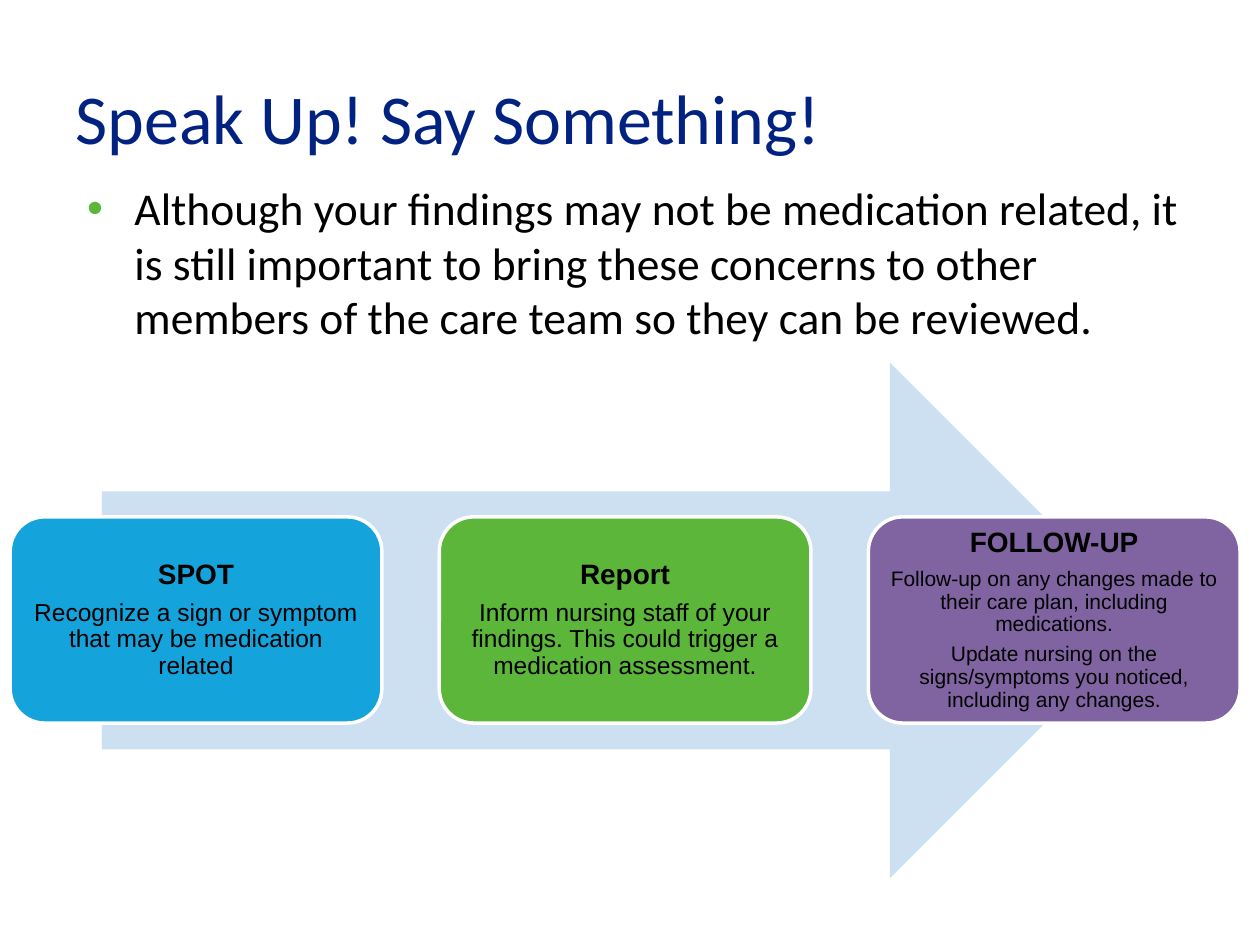
"""Build the "Speak Up! Say Something!" slide with its three-step arrow."""
from lxml import etree
from pptx import Presentation
from pptx.dml.color import RGBColor as RGB
from pptx.enum.shapes import MSO_SHAPE as SHAPE
from pptx.enum.text import MSO_ANCHOR as ANCHOR, PP_ALIGN as ALIGN
from pptx.oxml.ns import qn
from pptx.util import Pt

COLORS = {
    "title": "012281", "text": "000000", "arrow": "CCE0F2", "outline": "FFFFFF",
    "blue": "15A3DC", "green": "5BB63A", "purple": "8064A2",
}
STEPS = [
    ("blue", 14, ["SPOT", "Recognize a sign or symptom that may be medication related"]),
    ("green", 14, ["Report", "Inform nursing staff of your findings. "
                   "This could trigger a medication assessment."]),
    ("purple", 12, ["FOLLOW-UP",
                    "Follow-up on any changes made to their care plan, including medications.",
                    "Update nursing on the signs/symptoms you noticed, including any changes."]),
]
STEP_LEFT, STEP_PITCH = 5.8, 245.2


def set_font(para, name, size, color, bold=False):
    font = para.font
    font.name, font.size, font.bold = name, Pt(size), bold
    font.color.rgb = RGB.from_string(COLORS[color])


def add_filled(page, kind, left, top, width, height, color):
    shape = page.shapes.add_shape(kind, Pt(left), Pt(top), Pt(width), Pt(height))
    shape.shadow.inherit = False
    shape.fill.solid()
    shape.fill.fore_color.rgb = RGB.from_string(COLORS[color])
    return shape


deck = Presentation()
deck.slide_width, deck.slide_height = Pt(720), Pt(540)
page = deck.slides.add_slide(deck.slide_layouts[5])

title = page.shapes.title
title.left, title.top, title.width, title.height = Pt(36), Pt(21.6), Pt(648), Pt(90)
title.text_frame.text = "Speak Up! Say Something!"
title.text_frame.vertical_anchor = ANCHOR.MIDDLE
para = title.text_frame.paragraphs[0]
para.alignment = ALIGN.LEFT
set_font(para, "Calibri", 40, "title")

body = page.shapes.add_textbox(Pt(33.8), Pt(99.4), Pt(648), Pt(356.4))
body.text_frame.word_wrap = True
para = body.text_frame.paragraphs[0]
para.text = ("Although your findings may not be medication related, it is still important "
             "to bring these concerns to other members of the care team so they can be reviewed.")
properties = para._p.get_or_add_pPr()
properties.set("marL", str(Pt(36)))
properties.set("indent", str(Pt(-27)))
bullet_color = etree.SubElement(properties, qn("a:buClr"))
etree.SubElement(bullet_color, qn("a:srgbClr"), val=COLORS["green"])
etree.SubElement(properties, qn("a:buFont"), typeface="Arial")
etree.SubElement(properties, qn("a:buChar"), char="•")
set_font(para, "Calibri", 26, "text")

arrow = add_filled(page, SHAPE.RIGHT_ARROW, 58.3, 207.2, 597.6, 294.6, "arrow")
arrow.line.fill.background()

for index, (color, size, texts) in enumerate(STEPS):
    box = add_filled(page, SHAPE.ROUNDED_RECTANGLE,
                     STEP_LEFT + index * STEP_PITCH, 295.4, 212.4, 117.8, color)
    box.line.color.rgb = RGB.from_string(COLORS["outline"])
    box.line.width = Pt(2)
    frame = box.text_frame
    frame.word_wrap = True
    frame.vertical_anchor = ANCHOR.MIDDLE
    frame.margin_left = frame.margin_right = Pt(5)
    frame.margin_top = frame.margin_bottom = Pt(5)
    frame.text = "\n".join(texts)
    for row, para in enumerate(frame.paragraphs):
        text_size = size if row else 16
        para.alignment = ALIGN.CENTER
        para.line_spacing = 0.9
        para.space_after = Pt(round(0.35 * text_size, 1))
        set_font(para, "Arial", text_size, "text", bold=row == 0)

deck.save("out.pptx")
